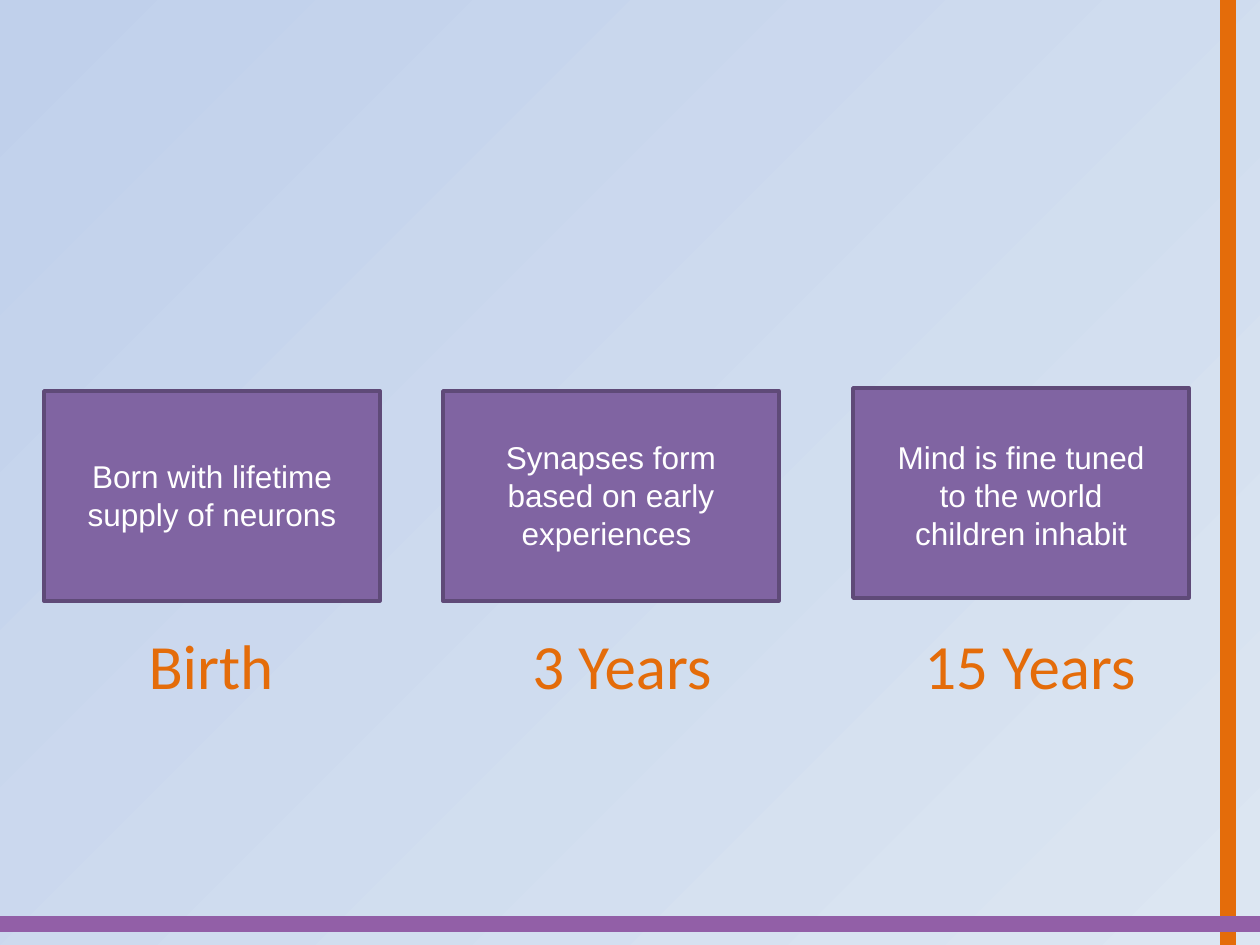
from pptx import Presentation
from pptx.dml.color import RGBColor
from pptx.enum.shapes import MSO_CONNECTOR, MSO_SHAPE
from pptx.enum.text import MSO_ANCHOR, PP_ALIGN
from pptx.oxml.ns import qn
from pptx.util import Pt
from lxml import etree

RECTANGLE = MSO_SHAPE.RECTANGLE
STRAIGHT = MSO_CONNECTOR.STRAIGHT
CENTER = PP_ALIGN.CENTER
TOP = MSO_ANCHOR.TOP

SLIDE_WIDTH, SLIDE_HEIGHT = 1260, 945
BACKGROUND = ("C0D0EB", "DCE6F2")
ORANGE, PURPLE, WHITE = "E46C0A", "8064A2", "FFFFFF"
PURPLE_BAR, PURPLE_EDGE = "925FA7", "5F4A78"
BARS = [
    ((1228, SLIDE_HEIGHT), (1228, 0), ORANGE),
    ((0, 924), (SLIDE_WIDTH, 924), PURPLE_BAR),
]
CARD_WIDTH, CARD_HEIGHT = 336, 210
LABEL_TOP, LABEL_WIDTH, LABEL_HEIGHT = 620, 402, 107

STAGES = [
    {"label": "Birth", "label_left": 10, "card": (44, 391),
     "caption": "Born with lifetime supply of neurons",
     "caption_top": 451, "caption_width": 294, "caption_height": 89},
    {"label": "3 Years", "label_left": 421, "card": (443, 391),
     "caption": "Synapses form based on early experiences ",
     "caption_top": 432, "caption_width": 315, "caption_height": 127},
    {"label": "15 Years", "label_left": 829, "card": (853, 388),
     "caption": "Mind is fine tuned to the world children inhabit",
     "caption_top": 432, "caption_width": 294, "caption_height": 127},
]


def px(*lengths):
    return [round(length * 914400 / 126) for length in lengths]


def color(value):
    return RGBColor.from_string(value)


def paint_background(page):
    fill = page.background.fill
    fill.gradient()
    fill.gradient_angle = 315
    for stop, value in zip(fill.gradient_stops, BACKGROUND):
        stop.color.rgb = color(value)


def add_bar(page, start, end, value):
    bar = page.shapes.add_connector(STRAIGHT, *px(*start, *end))
    bar.line.color.rgb = color(value)
    bar.line.width = Pt(9.5)
    etree.SubElement(bar._element.spPr, qn("a:effectLst"))


def add_card(page, left, top):
    card = page.shapes.add_shape(RECTANGLE, *px(left, top, CARD_WIDTH, CARD_HEIGHT))
    card.shadow.inherit = False
    card.fill.solid()
    card.fill.fore_color.rgb = color(PURPLE)
    card.line.color.rgb = color(PURPLE_EDGE)
    card.line.width = Pt(2)


def add_text(page, bounds, text, font, size, value):
    box = page.shapes.add_textbox(*px(*bounds))
    frame = box.text_frame
    frame.word_wrap = True
    frame.vertical_anchor = TOP
    para = frame.paragraphs[0]
    para.alignment = CENTER
    span = para.add_run()
    span.text = text
    span.font.name = font
    span.font.size = Pt(size)
    span.font.color.rgb = color(value)


def main():
    deck = Presentation()
    deck.slide_width, deck.slide_height = px(SLIDE_WIDTH, SLIDE_HEIGHT)
    page = deck.slides.add_slide(deck.slide_layouts[6])
    paint_background(page)
    for bar in BARS:
        add_bar(page, *bar)
    for stage in STAGES:
        left, top = stage["card"]
        add_card(page, left, top)
        width = stage["caption_width"]
        caption_left = left + (CARD_WIDTH - width) / 2
        add_text(page, (caption_left, stage["caption_top"], width, stage["caption_height"]),
                 stage["caption"], "Arial", 18, WHITE)
        add_text(page, (stage["label_left"], LABEL_TOP, LABEL_WIDTH, LABEL_HEIGHT),
                 stage["label"], "Calibri", 36, ORANGE)
    deck.save("out.pptx")


if __name__ == "__main__":
    main()
